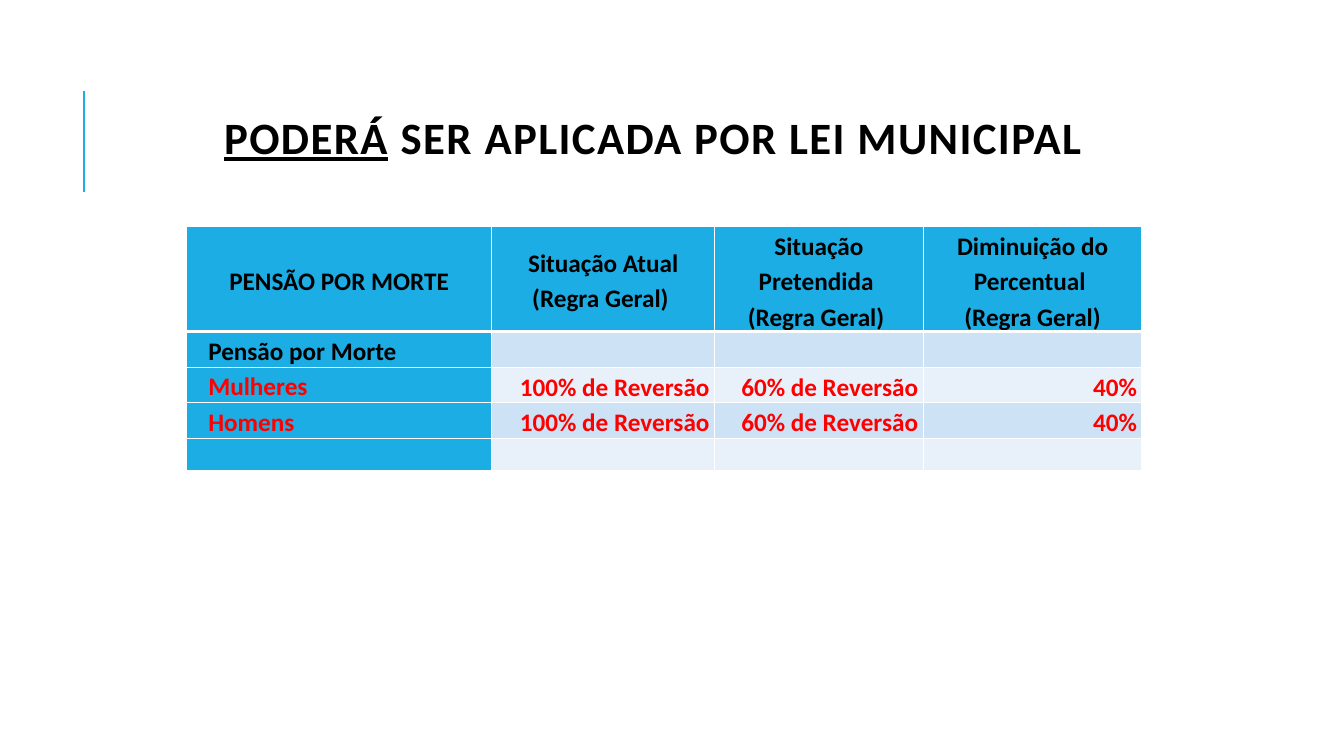
from dataclasses import dataclass

from lxml import etree
from pptx import Presentation
from pptx.dml.color import RGBColor
from pptx.enum.shapes import MSO_CONNECTOR
from pptx.enum.text import MSO_ANCHOR, PP_ALIGN
from pptx.oxml.ns import qn
from pptx.util import Emu, Inches, Pt

LEFT, CENTER, RIGHT = PP_ALIGN.LEFT, PP_ALIGN.CENTER, PP_ALIGN.RIGHT
MIDDLE, BOTTOM = MSO_ANCHOR.MIDDLE, MSO_ANCHOR.BOTTOM
STRAIGHT = MSO_CONNECTOR.STRAIGHT

# The slide is a grid of 80 columns by 45 rows of square units.
SLIDE_COLUMNS, SLIDE_ROWS = 80, 45
UNIT = Inches(1) / 6

FONT = "Calibri"
BLACK, RED, WHITE, BLUE = "000000", "FF0000", "FFFFFF", "1CADE4"
BANDS = ("CDE3F5", "E8F1FA")

COLUMN_WIDTHS = (18.18, 13.26, 12.42, 13.02)
ROW_HEIGHTS = (6.24, 2.12, 2.12, 2.12, 1.92)


@dataclass(frozen=True)
class TableRow:
    texts: tuple[str, ...]
    color: str = BLACK
    label_anchor: MSO_ANCHOR = MIDDLE


TABLE_ROWS = (
    TableRow((
        "PENSÃO POR MORTE",
        "Situação Atual (Regra Geral) ",
        "Situação Pretendida \n(Regra Geral) ",
        "Diminuição do Percentual \n(Regra Geral)",
    )),
    TableRow(("Pensão por Morte", "", "", ""), label_anchor=BOTTOM),
    TableRow(("Mulheres", "100% de Reversão", "60% de Reversão", "40%"), RED),
    TableRow(("Homens", "100% de Reversão", "60% de Reversão", "40%"), RED),
    TableRow(("", "", "", "")),
)


def grid(units: float) -> Emu:
    return Emu(round(units * UNIT))


def rgb(color: str) -> RGBColor:
    return RGBColor.from_string(color)


def format_run(run, size: float, color: str) -> None:
    run.font.name = FONT
    run.font.size = Pt(size)
    run.font.bold = True
    run.font.color.rgb = rgb(color)


def add_accent_line(slide) -> None:
    line = slide.shapes.add_connector(STRAIGHT, grid(5), grid(11.4), grid(5), grid(5.4))
    line.line.color.rgb = rgb(BLUE)
    line.line.width = Pt(1.5)
    etree.SubElement(line._element.spPr, qn("a:effectLst"))


def add_title(slide) -> None:
    title = slide.shapes.add_textbox(grid(5.88), grid(5.76), grid(66), grid(5.34))
    frame = title.text_frame
    frame.word_wrap = True
    frame.vertical_anchor = MIDDLE
    paragraph = frame.paragraphs[0]
    paragraph.alignment = CENTER
    paragraph.line_spacing = 0.8
    for text, underlined in (("PODERÁ", True), (" SER APLICADA POR LEI MUNICIPAL", False)):
        run = paragraph.add_run()
        run.text = text
        format_run(run, 32, BLACK)
        run.font.underline = underlined
        run.font._element.set("spc", "100")


def add_borders(cell, bottom_width: float, top_width: float) -> None:
    """Draw white borders; call before the fill, which must follow them in the XML."""
    properties = cell._tc.get_or_add_tcPr()
    for side, width in (("L", 1), ("R", 1), ("T", top_width), ("B", bottom_width)):
        border = etree.SubElement(properties, qn(f"a:ln{side}"), w=str(Pt(width)))
        fill = etree.SubElement(border, qn("a:solidFill"))
        etree.SubElement(fill, qn("a:srgbClr"), val=WHITE)


def fill_cell(cell, row: TableRow, row_index: int, column_index: int) -> None:
    is_header, is_label = row_index == 0, column_index == 0
    add_borders(cell, 3 if is_header else 1, 3 if row_index == 1 else 1)
    cell.fill.solid()
    cell.fill.fore_color.rgb = rgb(BLUE if is_header or is_label else BANDS[(row_index - 1) % 2])
    cell.margin_left = cell.margin_right = Inches(0.05)
    cell.margin_top = cell.margin_bottom = 0
    cell.vertical_anchor = MIDDLE if is_header else row.label_anchor if is_label else BOTTOM
    cell.text_frame.text = row.texts[column_index]
    for paragraph in cell.text_frame.paragraphs:
        paragraph.alignment = CENTER if is_header else LEFT if is_label else RIGHT
        if paragraph.runs:
            paragraph.line_spacing = 1.15
        if is_label and not is_header:
            paragraph._p.get_or_add_pPr().set("indent", str(grid(1)))
        for run in paragraph.runs:
            format_run(run, 18, row.color)


def add_pension_table(slide) -> None:
    table = slide.shapes.add_table(
        len(ROW_HEIGHTS), len(COLUMN_WIDTHS), grid(11.1), grid(13.5),
        grid(sum(COLUMN_WIDTHS)), grid(sum(ROW_HEIGHTS)),
    ).table
    for column, width in zip(table.columns, COLUMN_WIDTHS):
        column.width = grid(width)
    for row_index, (row, height) in enumerate(zip(TABLE_ROWS, ROW_HEIGHTS)):
        table.rows[row_index].height = grid(height)
        for column_index in range(len(COLUMN_WIDTHS)):
            fill_cell(table.cell(row_index, column_index), row, row_index, column_index)


def main() -> None:
    presentation = Presentation()
    presentation.slide_width = grid(SLIDE_COLUMNS)
    presentation.slide_height = grid(SLIDE_ROWS)
    slide = presentation.slides.add_slide(presentation.slide_layouts[6])
    add_accent_line(slide)
    add_title(slide)
    add_pension_table(slide)
    presentation.save("out.pptx")


if __name__ == "__main__":
    main()
